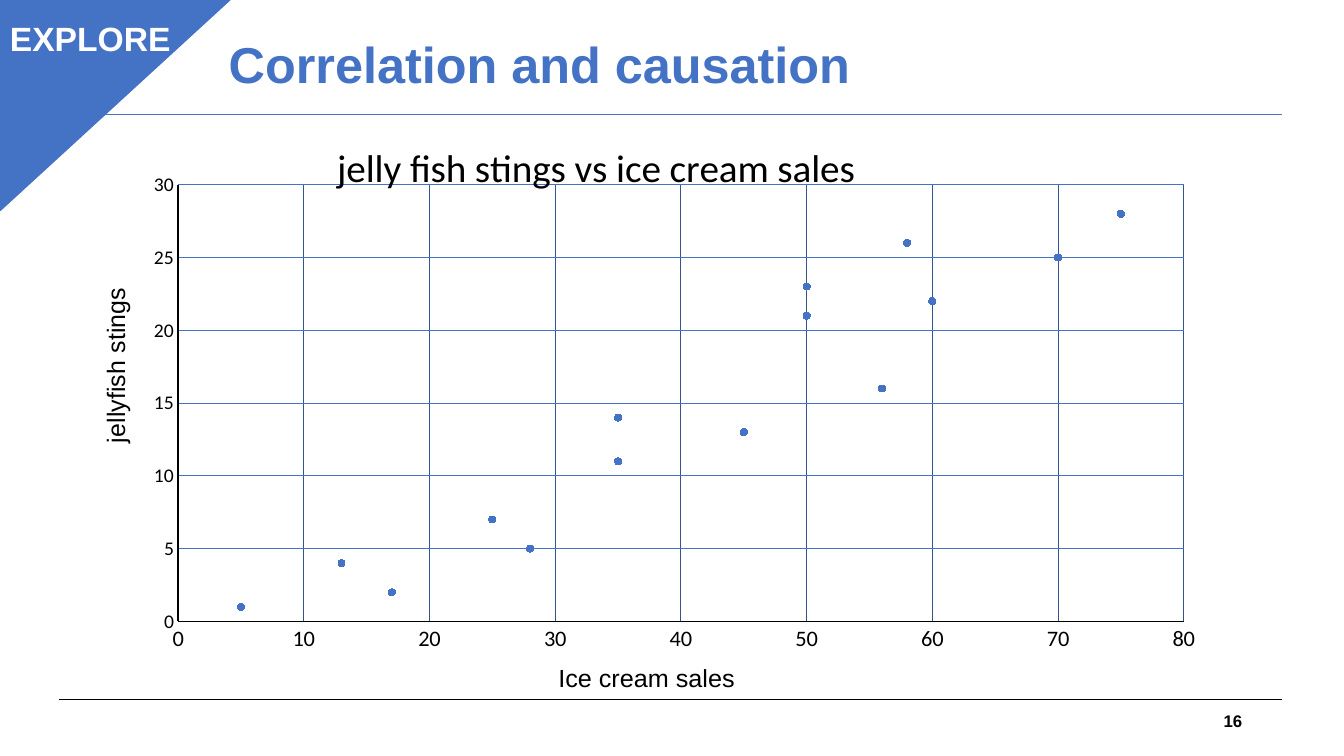
"""Build a slide with a scatter chart of jellyfish stings against ice cream sales."""
from lxml import etree
from pptx import Presentation
from pptx.chart.data import XyChartData
from pptx.dml.color import RGBColor
from pptx.enum.chart import XL_CHART_TYPE as ChartType, XL_MARKER_STYLE as Marker, XL_TICK_MARK as Tick
from pptx.enum.shapes import MSO_CONNECTOR as Connector, MSO_SHAPE as Shape
from pptx.enum.text import MSO_ANCHOR as Anchor, PP_ALIGN as Align
from pptx.oxml.ns import qn
from pptx.util import Inches, Pt

BLUE, BLACK, WHITE = "4472C4", "000000", "FFFFFF"


def color(value):
    return RGBColor.from_string(value)


def place(parent, **fractions):
    layout = parent.find(qn("c:layout"))
    if layout is None:
        layout = etree.Element(qn("c:layout"))
        parent.insert(0 if parent.find(qn("c:tx")) is None else 1, layout)
    manual = etree.SubElement(layout, qn("c:manualLayout"))
    for name, value in fractions.items():
        etree.SubElement(manual, qn(f"c:{name}")).set("val", str(value))


presentation = Presentation()
presentation.slide_width = Inches(13.33)
presentation.slide_height = Inches(7.5)
slide = presentation.slides.add_slide(presentation.slide_layouts[6])

for y, line_color in ((6.94, BLACK), (1.14, BLUE)):
    rule = slide.shapes.add_connector(
        Connector.STRAIGHT, Inches(0.59), Inches(y), Inches(12.72), Inches(y))
    rule.line.color.rgb = color(line_color)
    rule.line.width = Pt(0.75)
    etree.SubElement(rule._element.spPr, qn("a:effectLst"))

sales = [5, 13, 17, 28, 25, 35, 35, 45, 56, 50, 50, 60, 58, 70, 75]
stings = [1, 4, 2, 5, 7, 11, 14, 13, 16, 21, 23, 22, 26, 25, 28]
chart_data = XyChartData()
points = chart_data.add_series("Series 1")
for sale, sting in zip(sales, stings):
    points.add_data_point(sale, sting)

chart = slide.shapes.add_chart(
    ChartType.XY_SCATTER, Inches(0.47), Inches(1.1), Inches(11.68), Inches(5.85), chart_data).chart
chart.has_legend = False
chart.font.name = "Calibri"
chart.font.size = Pt(10)
chart.font.color.rgb = color(BLACK)
chart.plots[0].vary_by_categories = False
place(chart._chartSpace.chart.plotArea, layoutTarget="inner", xMode="edge", yMode="edge",
      x=0.111, y=0.127, w=0.854, h=0.751)

series = chart.plots[0].series[0]
series.format.line.fill.background()
series.marker.style = Marker.CIRCLE
series.marker.size = 5
series.marker.format.fill.solid()
series.marker.format.fill.fore_color.rgb = color(BLUE)
series.marker.format.line.color.rgb = color(BLUE)

axes = (
    (chart.category_axis, 80, 10, 16, "325491"),
    (chart.value_axis, 30, 5, 14, BLUE),
)
for axis, maximum, step, size, grid_color in axes:
    axis.minimum_scale = 0
    axis.maximum_scale = maximum
    axis.major_unit = step
    axis.major_tick_mark = axis.minor_tick_mark = Tick.NONE
    axis.tick_labels.font.size = Pt(size)
    axis.tick_labels.font.name = "Calibri"
    axis.tick_labels.font.color.rgb = color(BLACK)
    axis.format.line.color.rgb = color(BLACK)
    axis.format.line.width = Pt(1)
    axis.has_major_gridlines = True
    axis.major_gridlines.format.line.color.rgb = color(grid_color)
    axis.major_gridlines.format.line.width = Pt(0.75)

titles = (
    (chart, "jelly fish stings vs ice cream sales", 28, "Calibri", 0.24, 0.04),
    (chart.category_axis, "Ice cream sales", 18, "Arial", 0.43, 0.94),
    (chart.value_axis, "jellyfish stings", 18, "Arial", 0.04, 0.3),
)
for owner, text, size, font_name, x, y in titles:
    owner.has_title = True
    title = owner.chart_title if owner is chart else owner.axis_title
    run = title.text_frame.paragraphs[0].add_run()
    run.text = text
    run.font.size = Pt(size)
    run.font.name = font_name
    run.font.bold = False
    run.font.color.rgb = color(BLACK)
    place(title._element, xMode="edge", yMode="edge", x=x, y=y)

corner = slide.shapes.add_shape(
    Shape.ISOSCELES_TRIANGLE, Inches(0), Inches(-0.01), Inches(2.29), Inches(2.1))
corner.adjustments[0] = 0
corner._element.spPr.xfrm.set("flipV", "1")
corner.shadow.inherit = False
corner.fill.solid()
corner.fill.fore_color.rgb = color(BLUE)
corner.line.color.rgb = color(BLUE)
corner.line.width = Pt(1)

labels = (
    ("16", 9.42, 6.95, 3, 0.4, 12, BLACK, Align.RIGHT, Anchor.MIDDLE),
    ("Correlation and causation", 2.17, 0.28, 6.64, 0.71, 36, BLUE, Align.LEFT, Anchor.TOP),
    ("EXPLORE", -0.05, 0.13, 1.89, 0.5, 24, WHITE, Align.CENTER, Anchor.TOP),
)
for text, left, top, width, height, size, text_color, alignment, anchor in labels:
    box = slide.shapes.add_textbox(Inches(left), Inches(top), Inches(width), Inches(height))
    box.text_frame.word_wrap = True
    box.text_frame.vertical_anchor = anchor
    paragraph = box.text_frame.paragraphs[0]
    paragraph.alignment = alignment
    run = paragraph.add_run()
    run.text = text
    run.font.name = "Arial"
    run.font.size = Pt(size)
    run.font.bold = True
    run.font.color.rgb = color(text_color)

presentation.save("out.pptx")
